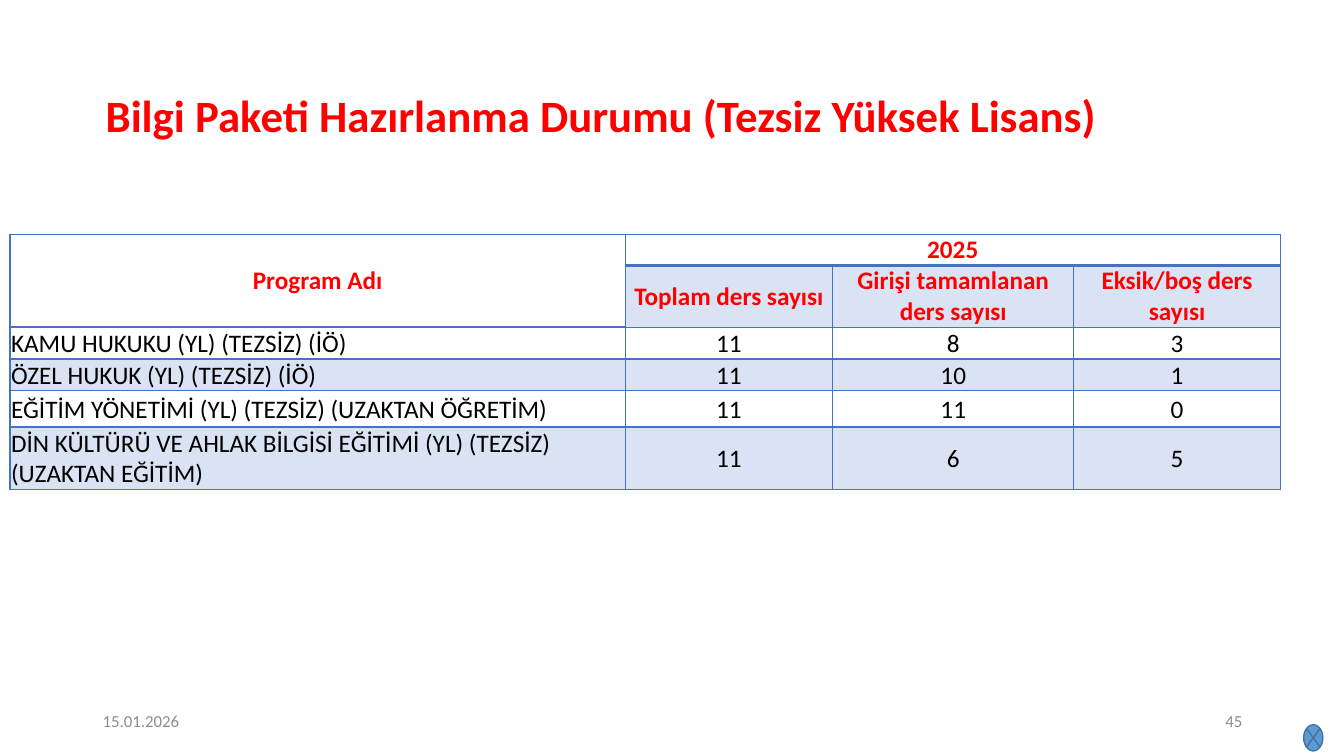
from dataclasses import dataclass

import lxml.etree
import pptx
import pptx.dml.color
import pptx.enum.shapes
import pptx.enum.text
import pptx.oxml.ns
import pptx.util

Inches = pptx.util.Inches
Align = pptx.enum.text.PP_ALIGN
Anchor = pptx.enum.text.MSO_ANCHOR


@dataclass(frozen=True)
class Theme:
    """Colours, font and type sizes of the slide."""
    font: str = "Calibri"
    accent: str = "FF0000"
    ink: str = "000000"
    muted: str = "8C8C8C"
    border: str = "4472C4"
    band: str = "DAE3F3"
    paper: str = "FFFFFF"
    marker: str = "5B9BD5"
    marker_line: str = "43739E"
    title_size: int = 32
    table_size: int = 18
    footer_size: int = 12


THEME = Theme()

HEADINGS = [
    ["Program Adı", "2025", "", ""],
    ["", "Toplam ders sayısı", "Girişi tamamlanan ders sayısı", "Eksik/boş ders sayısı"],
]
PROGRAMS = [
    ["KAMU HUKUKU (YL) (TEZSİZ) (İÖ)", 11, 8, 3],
    ["ÖZEL HUKUK (YL) (TEZSİZ) (İÖ)", 11, 10, 1],
    ["EĞİTİM YÖNETİMİ (YL) (TEZSİZ) (UZAKTAN ÖĞRETİM)", 11, 11, 0],
    ["DİN KÜLTÜRÜ VE AHLAK BİLGİSİ EĞİTİMİ (YL) (TEZSİZ) (UZAKTAN EĞİTİM)", 11, 6, 5],
]
COLUMN_WIDTHS = [6.1, 2.06, 2.39, 2.05]
ROW_HEIGHTS = [0.28, 0.46, 0.24, 0.24, 0.36, 0.46]


def color(value):
    """Turn a hex string into a colour."""
    return pptx.dml.color.RGBColor.from_string(value)


def style_paragraph(paragraph, size, ink, alignment, bold=False):
    """Set the alignment and font of a paragraph."""
    paragraph.alignment = alignment
    font = paragraph.font
    font.name = THEME.font
    font.size = pptx.util.Pt(size)
    font.bold = bold
    font.color.rgb = color(ink)


def set_borders(cell, bottom_width):
    """Draw the four borders of a table cell."""
    properties = cell._tc.get_or_add_tcPr()
    widths = {"a:lnL": 1, "a:lnR": 1, "a:lnT": 1, "a:lnB": bottom_width}
    for index, (tag, width) in enumerate(widths.items()):
        line = lxml.etree.Element(pptx.oxml.ns.qn(tag), w=str(pptx.util.Pt(width)))
        fill = lxml.etree.SubElement(line, pptx.oxml.ns.qn("a:solidFill"))
        lxml.etree.SubElement(fill, pptx.oxml.ns.qn("a:srgbClr"), val=THEME.border)
        properties.insert(index, line)


def add_title(slide, left, top, width, height):
    """Place the title placeholder in its box."""
    title = slide.shapes.title
    title.left, title.top, title.width, title.height = map(Inches, (left, top, width, height))
    frame = title.text_frame
    frame.text = "Bilgi Paketi Hazırlanma Durumu (Tezsiz Yüksek Lisans)"
    frame.word_wrap = True
    frame.auto_size = pptx.enum.text.MSO_AUTO_SIZE.NONE
    frame.vertical_anchor = Anchor.MIDDLE
    paragraph = frame.paragraphs[0]
    style_paragraph(paragraph, THEME.title_size, THEME.accent, Align.CENTER, True)
    paragraph.line_spacing = 0.9


def fill_cell(cell, value, row, column):
    """Write and format one table cell according to its row and column."""
    is_heading = row < len(HEADINGS)
    cell.text = str(value)
    cell.vertical_anchor = Anchor.MIDDLE
    cell.margin_left = cell.margin_right = Inches(0.05 if is_heading else 0.01)
    cell.margin_top = Inches(0 if is_heading else 0.01)
    cell.margin_bottom = 0
    style_paragraph(
        cell.text_frame.paragraphs[0],
        THEME.table_size,
        THEME.accent if is_heading else THEME.ink,
        Align.CENTER if is_heading or column else Align.LEFT,
        is_heading,
    )
    cell.fill.solid()
    cell.fill.fore_color.rgb = color(THEME.band if row % 2 else THEME.paper)
    set_borders(cell, 2 if row == 0 else 1)


def add_program_table(slide, left, top):
    """Build the table of programs and course counts."""
    rows = HEADINGS + PROGRAMS
    size = Inches(sum(COLUMN_WIDTHS)), Inches(sum(ROW_HEIGHTS))
    frame = slide.shapes.add_table(
        len(rows), len(COLUMN_WIDTHS), Inches(left), Inches(top), *size)
    table = frame.table
    for column, width in zip(table.columns, COLUMN_WIDTHS):
        column.width = Inches(width)
    for row, height in zip(table.rows, ROW_HEIGHTS):
        row.height = Inches(height)
    for row, values in enumerate(rows):
        for column, value in enumerate(values):
            fill_cell(table.cell(row, column), value, row, column)
    table.cell(0, 0).merge(table.cell(1, 0))
    table.cell(0, 1).merge(table.cell(0, 3))


def add_footer_text(slide, text, alignment, left, top, width, height):
    """Add one footer text in its box."""
    box = slide.shapes.add_textbox(*map(Inches, (left, top, width, height)))
    frame = box.text_frame
    frame.word_wrap = True
    frame.vertical_anchor = Anchor.MIDDLE
    frame.text = text
    style_paragraph(frame.paragraphs[0], THEME.footer_size, THEME.muted, alignment)


def add_marker(slide, left, top, width, height):
    """Add the crossed circle in the corner."""
    marker = slide.shapes.add_shape(
        pptx.enum.shapes.MSO_SHAPE.FLOWCHART_SUMMING_JUNCTION,
        *map(Inches, (left, top, width, height)))
    marker.shadow.inherit = False
    marker.fill.solid()
    marker.fill.fore_color.rgb = color(THEME.marker)
    marker.line.color.rgb = color(THEME.marker_line)
    marker.line.width = pptx.util.Pt(1)


def main():
    """Build the slide and save the presentation."""
    presentation = pptx.Presentation()
    presentation.slide_width = Inches(13.33)
    presentation.slide_height = Inches(7.5)
    slide = presentation.slides.add_slide(presentation.slide_layouts[5])
    add_title(slide, 0.39, 0.85, 11.15, 0.65)
    add_program_table(slide, 0.1, 2.33)
    add_footer_text(slide, "15.01.2026", Align.LEFT, 0.92, 6.95, 3, 0.4)
    add_footer_text(slide, "45", Align.RIGHT, 9.42, 6.95, 3, 0.4)
    add_marker(slide, 12.93, 7.19, 0.19, 0.26)
    presentation.save("out.pptx")


if __name__ == "__main__":
    main()
